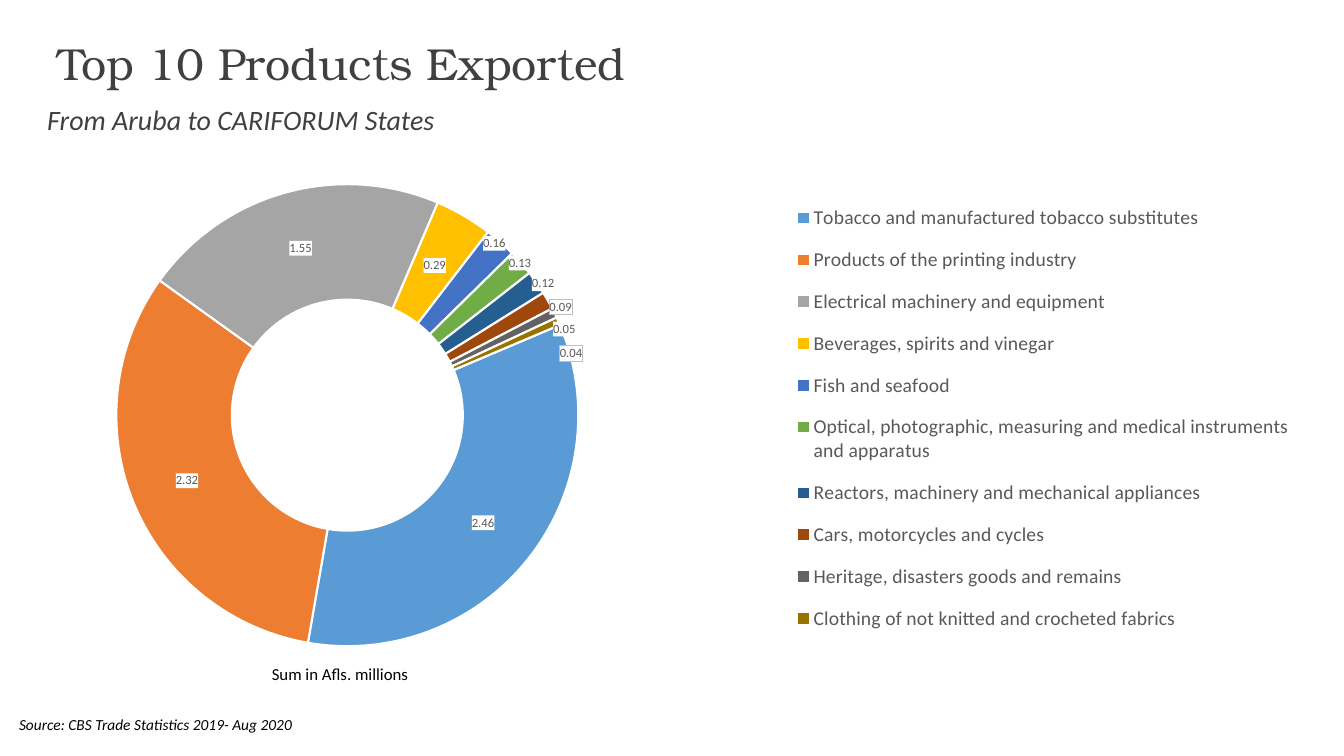
from lxml.etree import SubElement
from pptx import Presentation
from pptx.chart.data import CategoryChartData
from pptx.dml.color import RGBColor
from pptx.enum.chart import XL_CHART_TYPE, XL_LEGEND_POSITION
from pptx.enum.text import MSO_ANCHOR
from pptx.oxml import parse_xml
from pptx.oxml.ns import nsdecls, qn
from pptx.util import Cm, Pt

COLOURS = {
    "white": "FFFFFF", "black": "000000", "heading": "404040",
    "label": "595959", "frame": "BFBFBF",
}
PRODUCTS = [
    ("Tobacco and manufactured tobacco substitutes", 2.46, "5B9BD5"),
    ("Products of the printing industry", 2.32, "ED7D31"),
    ("Electrical machinery and equipment", 1.55, "A5A5A5"),
    ("Beverages, spirits and vinegar", 0.29, "FFC000"),
    ("Fish and seafood", 0.16, "4472C4"),
    ("Optical, photographic, measuring and medical instruments and apparatus", 0.13, "70AD47"),
    ("Reactors, machinery and mechanical appliances", 0.12, "255E91"),
    ("Cars, motorcycles and cycles", 0.09, "9E480E"),
    ("Heritage, disasters goods and remains", 0.05, "636363"),
    ("Clothing of not knitted and crocheted fabrics", 0.04, "997300"),
]
LABEL_SHIFTS = {
    4: (0.025, -0.07), 5: (0.033, -0.063), 6: (0.042, -0.053),
    7: (0.049, -0.037), 8: (0.048, -0.016), 9: (0.051, 0.014),
}
FRAMED_LABELS = (7, 9)


def set_font(font, colour, **formats):
    for name, value in {"name": "Calibri", **formats}.items():
        setattr(font, name, value)
    font.color.rgb = RGBColor.from_string(COLOURS[colour])


def add_text(page, area, text, colour, inset=0, anchor=MSO_ANCHOR.TOP, spacing=1.0, **formats):
    frame = page.shapes.add_textbox(*map(Cm, area)).text_frame
    settings = {
        "word_wrap": True, "vertical_anchor": anchor,
        "margin_left": Cm(inset), "margin_right": Cm(inset),
        "margin_top": Cm(inset / 2), "margin_bottom": Cm(inset / 2),
    }
    for name, value in settings.items():
        setattr(frame, name, value)
    para = frame.paragraphs[0]
    para.line_spacing = spacing
    span = para.add_run()
    span.text = text
    set_font(span.font, colour, **formats)


def make_layout(**values):
    layout = parse_xml(f"<c:layout {nsdecls('c')}><c:manualLayout/></c:layout>")
    for name, value in values.items():
        SubElement(layout[0], qn(f"c:{name}")).set("val", str(value))
    return layout


def add_label_box(label, framed=False):
    line = f'<a:solidFill><a:srgbClr val="{COLOURS["frame"]}"/></a:solidFill>' if framed else "<a:noFill/>"
    label.find(qn("c:txPr")).addprevious(parse_xml(
        f'<c:spPr {nsdecls("c", "a")}><a:solidFill><a:srgbClr val="{COLOURS["white"]}"/>'
        f'</a:solidFill><a:ln w="6350">{line}</a:ln></c:spPr>'))


def style_slices(series):
    for point_number, (_, _, colour) in enumerate(PRODUCTS):
        slice_format = series.points[point_number].format
        slice_format.fill.solid()
        slice_format.fill.fore_color.rgb = RGBColor.from_string(colour)
        slice_format.line.color.rgb = RGBColor.from_string(COLOURS["white"])
        slice_format.line.width = Pt(1.5)


def style_labels(series):
    labels = series.data_labels
    labels.show_value = True
    labels.number_format = "0.00"
    labels.number_format_is_linked = False
    set_font(labels.font, "label", size=Pt(9))
    group = labels._element
    add_label_box(group)
    leader = group.find(qn("c:showLeaderLines"))
    if leader is not None:
        leader.set("val", "0")
    for point_number in LABEL_SHIFTS:
        set_font(series.points[point_number].data_label.font, "label", size=Pt(9))
    for label in group.findall(qn("c:dLbl")):
        index = label.find(qn("c:idx"))
        point_number = int(index.get("val"))
        across, down = LABEL_SHIFTS[point_number]
        index.addnext(make_layout(x=across, y=down))
        add_label_box(label, point_number in FRAMED_LABELS)


def add_export_chart(page, area):
    data = CategoryChartData(number_format="0.00")
    data.categories = [name for name, _, _ in PRODUCTS]
    data.add_series("Series 1", [value for _, value, _ in PRODUCTS])
    chart = page.shapes.add_chart(XL_CHART_TYPE.DOUGHNUT, *map(Cm, area), data).chart
    chart.has_title = False
    set_font(chart.font, "black", size=Pt(10))
    chart.has_legend = True
    legend = chart.legend
    legend.position = XL_LEGEND_POSITION.RIGHT
    legend.include_in_layout = False
    set_font(legend.font, "label", size=Pt(14))
    for old in legend._element.findall(qn("c:layout")):
        legend._element.remove(old)
    legend._element.find(qn("c:legendPos")).addnext(
        make_layout(xMode="edge", yMode="edge", x=0.585, y=0.12, w=0.4, h=0.76))

    plot = chart.plots[0]
    plot.vary_by_categories = True
    ring = plot._element
    for name, value in {"firstSliceAng": 67, "holeSize": 70}.items():
        ring.find(qn(f"c:{name}")).set("val", str(value))
    plot_area = ring.getparent()
    for old in plot_area.findall(qn("c:layout")):
        plot_area.remove(old)
    plot_area.insert(0, make_layout(
        layoutTarget="inner", xMode="edge", yMode="edge", x=0.063, y=0.113, w=0.36, h=0.764))
    style_slices(plot.series[0])
    style_labels(plot.series[0])


def add_heading(page, left, top):
    add_text(page, (left, top, 31.5, 1.2), "Top 10 Products Exported", "heading",
             inset=0.25, anchor=MSO_ANCHOR.BOTTOM, spacing=0.9, name="TeX Gyre Bonum", size=Pt(32))
    add_text(page, (left, top + 1.4, 12.52, 1.2), "From Aruba to CARIFORUM States", "heading",
             size=Pt(20), italic=True)


def add_notes_on_data(page, left, top):
    add_text(page, (left + 6.12, top, 6.76, 0.77), "Sum in Afls. millions", "black",
             inset=0.25, size=Pt(12))
    add_text(page, (left, top + 1.42, 13.36, 0.64), "Source: CBS Trade Statistics 2019- Aug 2020",
             "black", size=Pt(11), italic=True)


def main():
    deck = Presentation()
    deck.slide_width, deck.slide_height = Cm(33.87), Cm(19.05)
    page = deck.slides.add_slide(deck.slide_layouts[6])
    add_export_chart(page, (0.89, 2.92, 32.36, 15.24))
    add_heading(page, 1.19, 1.19)
    add_notes_on_data(page, 0.48, 16.59)
    deck.save("out.pptx")


if __name__ == "__main__":
    main()
